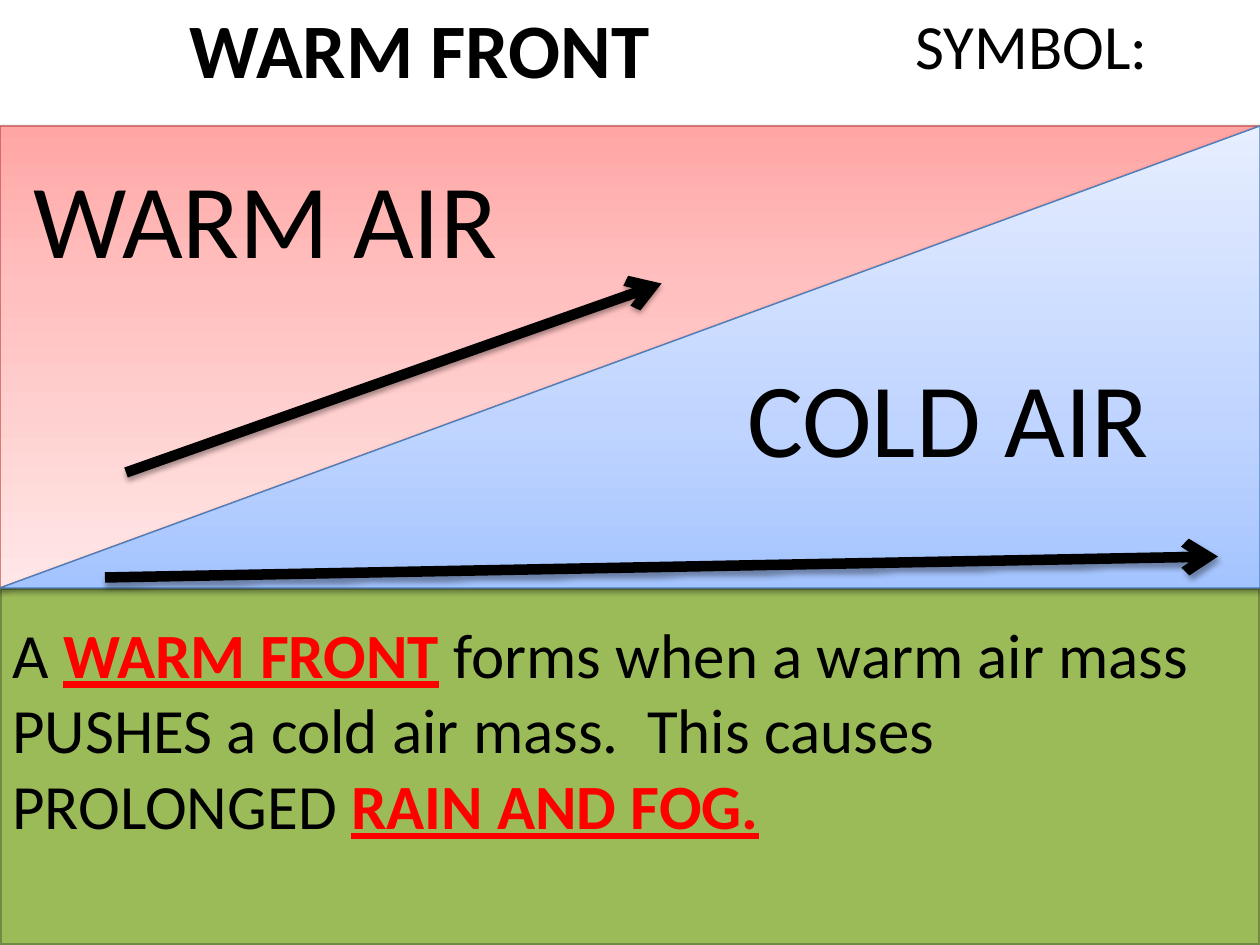
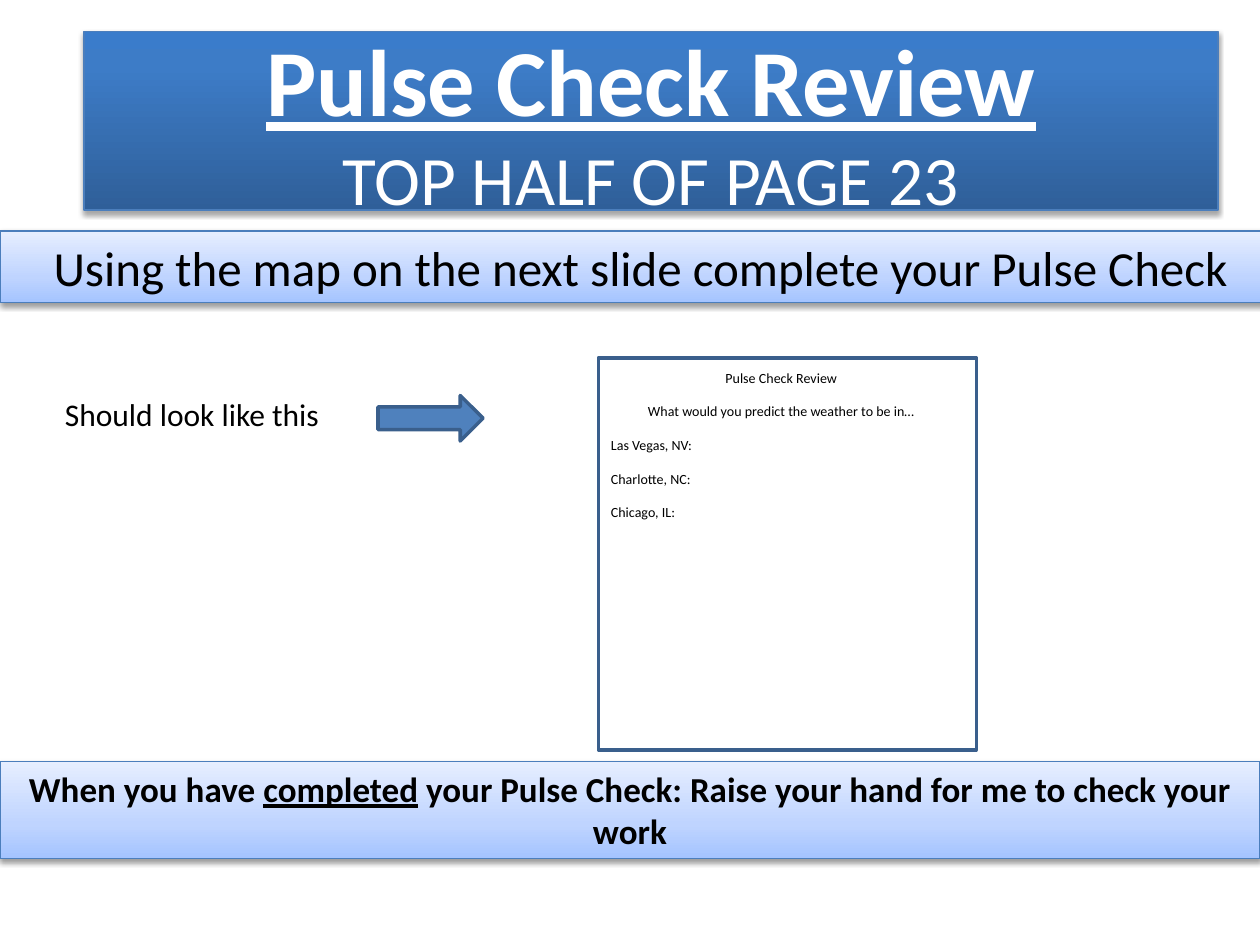
from lxml import etree
from pptx import Presentation
from pptx.dml.color import RGBColor
from pptx.enum.shapes import MSO_CONNECTOR, MSO_SHAPE as SHAPE
from pptx.enum.text import MSO_ANCHOR as ANCHOR, MSO_AUTO_SIZE, PP_ALIGN as ALIGN
from pptx.oxml.ns import qn
from pptx.util import Pt

BLACK = RGBColor(0x00, 0x00, 0x00)
WHITE = RGBColor(0xFF, 0xFF, 0xFF)
RED = RGBColor(0xFF, 0x00, 0x00)
GROUND = RGBColor(0x9B, 0xBB, 0x59)
GROUND_EDGE = RGBColor(0x73, 0x8A, 0x42)
WARM_EDGE = RGBColor(0xBF, 0x4C, 0x48)
COLD_EDGE = RGBColor(0x4B, 0x7E, 0xBC)
ARROW_BLUE = RGBColor(0x4F, 0x81, 0xBD)
NAVY = RGBColor(0x3A, 0x5F, 0x8C)
# Gradients run from bottom to top: (percent, colour)
WARM = [(0, RGBColor(0xFF, 0xA6, 0xA5)), (35, RGBColor(0xFF, 0xC0, 0xBF)),
        (100, RGBColor(0xFF, 0xE7, 0xE7))]
COLD = [(0, RGBColor(0xA4, 0xC4, 0xFF)), (35, RGBColor(0xBF, 0xD4, 0xFF)),
        (100, RGBColor(0xE6, 0xEE, 0xFF))]
HEADER = [(0, RGBColor(0x2F, 0x5F, 0x99)), (80, RGBColor(0x3D, 0x7C, 0xC7)),
          (100, RGBColor(0x3A, 0x7C, 0xCB))]
SOFT_SHADOW = (1.6, 38)  # distance in points, opacity in percent
DEEP_SHADOW = (1.8, 35)
EMPHASIS = dict(color=RED, bold=True, underline=True)


def paint(shape, line, weight, fill=None, shadow=None):
    """Set line, fill (none, one colour or gradient stops) and shadow."""
    properties = shape.element.spPr
    shape.line.color.rgb = line
    shape.line.width = Pt(weight)
    if isinstance(fill, list):
        shape.fill.gradient()
        shape.fill.gradient_angle = 90
        stops = properties.find(".//" + qn("a:gsLst"))
        for old_stop in list(stops):
            stops.remove(old_stop)
        for percent, color in fill:
            stop = etree.SubElement(stops, qn("a:gs"), pos=str(percent * 1000))
            etree.SubElement(stop, qn("a:srgbClr"), val=str(color))
    elif fill is not None:
        shape.fill.solid()
        shape.fill.fore_color.rgb = fill
    elif hasattr(shape, "fill"):
        shape.fill.background()
    effects = etree.SubElement(properties, qn("a:effectLst"))
    if shadow:
        distance, opacity = shadow
        outer = etree.SubElement(effects, qn("a:outerShdw"), blurRad=str(Pt(3.1)),
                                 dist=str(Pt(distance)), dir="5400000", rotWithShape="0")
        tint = etree.SubElement(outer, qn("a:srgbClr"), val=str(BLACK))
        etree.SubElement(tint, qn("a:alpha"), val=str(opacity * 1000))


def write(shape, *runs, size, color=BLACK, bold=False, underline=False,
          align=ALIGN.LEFT, anchor=ANCHOR.TOP, new=False, gap=0):
    """Write runs, each a string or (string, changes); new starts another paragraph."""
    frame = shape.text_frame
    frame.word_wrap = True
    frame.auto_size = MSO_AUTO_SIZE.NONE
    frame.vertical_anchor = anchor
    paragraph = frame.add_paragraph() if new else frame.paragraphs[0]
    paragraph.alignment = align
    paragraph.space_before = Pt(gap)
    for item in runs:
        words, changes = (item, {}) if isinstance(item, str) else item
        look = dict(size=size, color=color, bold=bold, underline=underline) | changes
        if words == "\n":
            paragraph.add_line_break()
            continue
        run = paragraph.add_run()
        run.text = words
        run.font.name = "Calibri"
        run.font.size = Pt(look["size"])
        run.font.color.rgb = look["color"]
        run.font.bold = look["bold"]
        run.font.underline = look["underline"]


deck = Presentation()
deck.slide_width, deck.slide_height = Pt(720), Pt(540)
title_only = deck.slide_layouts[5]

# Slide 1: warm front
front = deck.slides.add_slide(title_only)
title = front.shapes.title
title.left, title.top, title.width, title.height = Pt(0), Pt(-18), Pt(480), Pt(90)
write(title, "WARM FRONT", size=44, bold=True, align=ALIGN.CENTER, anchor=ANCHOR.MIDDLE)

ground = front.shapes.add_shape(SHAPE.RECTANGLE, Pt(0), Pt(336), Pt(720), Pt(204))
paint(ground, GROUND_EDGE, 2, GROUND)
for flip, edge, gradient in (("flipV", WARM_EDGE, WARM), ("flipH", COLD_EDGE, COLD)):
    air_mass = front.shapes.add_shape(SHAPE.RIGHT_TRIANGLE, Pt(0), Pt(72), Pt(720), Pt(264))
    air_mass.element.spPr.xfrm.set(flip, "1")
    paint(air_mass, edge, 0.75, gradient, SOFT_SHADOW)

for words, left, top, width, height, size in (
        ("WARM AIR", 12, 84, 414, 80, 60),
        ("COLD AIR", 420, 198, 300, 80, 60),
        ("SYMBOL:", 516, 0, 168, 51, 36)):
    label = front.shapes.add_textbox(Pt(left), Pt(top), Pt(width), Pt(height))
    write(label, words, size=size)

for start_x, start_y, end_x, end_y in ((72, 270, 378, 162), (60, 330, 696, 318)):
    wind = front.shapes.add_connector(MSO_CONNECTOR.STRAIGHT, Pt(start_x), Pt(start_y),
                                      Pt(end_x), Pt(end_y))
    paint(wind, BLACK, 6, shadow=DEEP_SHADOW)
    etree.SubElement(wind.line._get_or_add_ln(), qn("a:tailEnd"), type="arrow")

definition = front.shapes.add_textbox(Pt(0), Pt(348), Pt(702), Pt(138))
write(definition, "A ", ("WARM FRONT", EMPHASIS),
      " forms when a warm air mass PUSHES a cold air mass.  This causes PROLONGED ",
      ("RAIN AND FOG.", EMPHASIS), size=36)

# Slide 2: pulse check
review = deck.slides.add_slide(title_only)
title = review.shapes.title
title.left, title.top, title.width, title.height = Pt(48), Pt(18), Pt(648), Pt(102)
paint(title, COLD_EDGE, 0.75, HEADER, DEEP_SHADOW)
write(title, ("Pulse Check Review", dict(size=54, bold=True, underline=True)), "\n",
      "TOP HALF OF PAGE 23", size=39.6, color=WHITE, align=ALIGN.CENTER,
      anchor=ANCHOR.MIDDLE)

for top, width, height, size, bold, runs in (
        (132, 732, 41, 28, False,
         ["Using the map on the next slide complete your Pulse Check"]),
        (435, 720, 55.5, 20, True,
         ["When you have ", ("completed", dict(underline=True)),
          " your Pulse Check: Raise your hand for me to check your work"])):
    banner = review.shapes.add_shape(SHAPE.RECTANGLE, Pt(0), Pt(top), Pt(width), Pt(height))
    paint(banner, COLD_EDGE, 0.75, COLD, SOFT_SHADOW)
    write(banner, *runs, size=size, bold=bold, align=ALIGN.CENTER)

page = review.shapes.add_shape(SHAPE.RECTANGLE, Pt(342), Pt(204.5), Pt(216), Pt(224))
paint(page, NAVY, 2)
questions = review.shapes.add_textbox(Pt(342), Pt(207.5), Pt(209), Pt(94))
for index, (words, align) in enumerate((
        ("Pulse Check Review", ALIGN.CENTER),
        ("What would you predict the weather to be in…", ALIGN.CENTER),
        ("Las Vegas, NV:", ALIGN.LEFT),
        ("Charlotte, NC:", ALIGN.LEFT),
        ("Chicago, IL:", ALIGN.LEFT))):
    write(questions, words, size=8, align=align, new=index > 0, gap=9.6 if index else 0)

hint = review.shapes.add_textbox(Pt(30), Pt(222), Pt(192), Pt(29))
write(hint, "Should look like this", size=18)
pointer = review.shapes.add_shape(SHAPE.RIGHT_ARROW, Pt(216), Pt(226), Pt(60), Pt(26))
paint(pointer, NAVY, 2, ARROW_BLUE)

deck.save("out.pptx")
